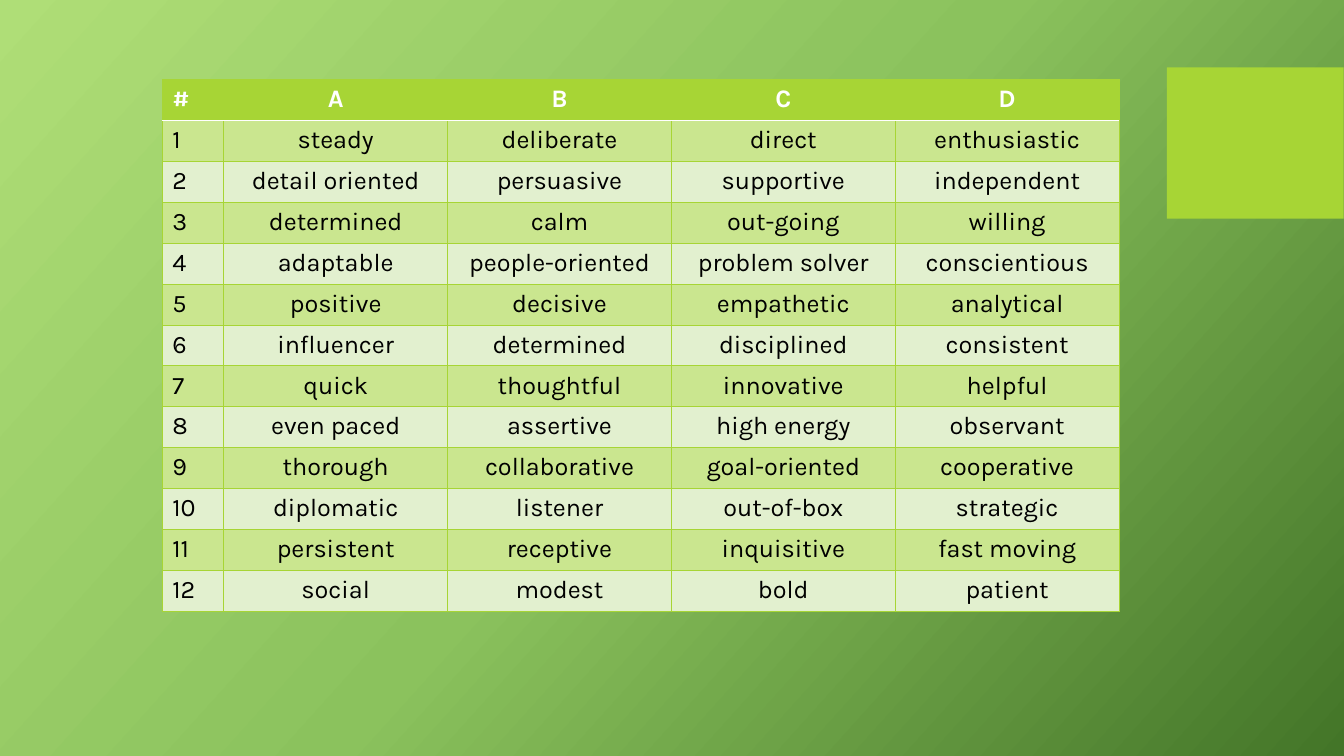
from lxml.etree import SubElement
from pptx import Presentation
from pptx.dml.color import RGBColor
from pptx.enum.shapes import MSO_SHAPE
from pptx.enum.text import PP_ALIGN
from pptx.oxml.ns import qn
from pptx.util import Cm, Pt

COLORS = {
    "lime": "A7D535",
    "band": "CAE68F",
    "pale": "E2F0CF",
    "white": "FFFFFF",
    "black": "000000",
}
BACKGROUND_STOPS = {0: "AFDE77", 50: "8BC25D", 100: "437528"}
PLAIN_TABLE_STYLE = "{2D5ABB26-0587-4C30-8999-92F81FD0307C}"
TABLE_TOP, TABLE_HEIGHT = 2.01, 13.39
NUMBER_LEFT, NUMBER_WIDTH = 4.09, 1.55
TRAIT_WIDTH = 5.64

TRAITS = [
    ("A", "B", "C", "D"),
    ("steady", "deliberate", "direct", "enthusiastic"),
    ("detail oriented", "persuasive", "supportive", "independent"),
    ("determined", "calm", "out-going", "willing"),
    ("adaptable", "people-oriented", "problem solver", "conscientious"),
    ("positive", "decisive", "empathetic", "analytical"),
    ("influencer", "determined", "disciplined", "consistent"),
    ("quick", "thoughtful", "innovative", "helpful"),
    ("even paced", "assertive", "high energy", "observant"),
    ("thorough", "collaborative", "goal-oriented", "cooperative"),
    ("diplomatic", "listener", "out-of-box", "strategic"),
    ("persistent", "receptive", "inquisitive", "fast moving"),
    ("social", "modest", "bold", "patient"),
]


def rgb(name):
    """Return the named palette colour."""
    return RGBColor.from_string(COLORS[name])


def set_background(slide):
    """Fill the slide with the diagonal green gradient."""
    fill = slide.background.fill
    fill.gradient()
    fill.gradient_angle = 360 - 42
    stop_list = slide.element.find(".//" + qn("a:gsLst"))
    for stop in list(stop_list):
        stop_list.remove(stop)
    for percent, color in BACKGROUND_STOPS.items():
        stop = SubElement(stop_list, qn("a:gs"), pos=str(percent * 1000))
        SubElement(stop, qn("a:srgbClr"), val=color)


def add_block(slide, left, top, width, height):
    """Add a plain lime rectangle."""
    shape = slide.shapes.add_shape(
        MSO_SHAPE.RECTANGLE, Cm(left), Cm(top), Cm(width), Cm(height))
    shape.shadow.inherit = False
    shape.fill.solid()
    shape.fill.fore_color.rgb = rgb("lime")
    shape.line.fill.background()


def add_border(cell, side, color, width):
    """Draw one border of a cell."""
    properties = cell._tc.get_or_add_tcPr()
    line = SubElement(properties, qn(f"a:ln{side}"), w=str(Pt(width)))
    fill = SubElement(line, qn("a:solidFill"))
    SubElement(fill, qn("a:srgbClr"), val=COLORS[color])


def format_cell(cell, text, row, alignment):
    """Write a cell and give it the look of its row."""
    white_edge = {0: "B", 1: "T"}.get(row)
    for side in "LRTB":
        if side == white_edge:
            add_border(cell, side, "white", 1)
        else:
            add_border(cell, side, "lime", 0.75)
    cell.fill.solid()
    banding = "band" if row % 2 else "pale"
    cell.fill.fore_color.rgb = rgb(banding if row else "lime")
    cell.text_frame.text = text
    paragraph = cell.text_frame.paragraphs[0]
    paragraph.alignment = alignment
    font = paragraph.runs[0].font
    font.name = "Karla"
    font.size = Pt(18)
    font.bold = row == 0
    font.color.rgb = rgb("black" if row else "white")


def add_banded_table(slide, rows, left, column_width, alignment):
    """Add a table of equal columns with a header and banded rows."""
    column_count = len(rows[0])
    table = slide.shapes.add_table(
        len(rows), column_count, Cm(left), Cm(TABLE_TOP),
        Cm(column_width * column_count), Cm(TABLE_HEIGHT)).table
    table._tbl.tblPr.find(qn("a:tableStyleId")).text = PLAIN_TABLE_STYLE
    for column in table.columns:
        column.width = Cm(column_width)
    for row, texts in enumerate(rows):
        table.rows[row].height = Cm(TABLE_HEIGHT / len(rows))
        for column, text in enumerate(texts):
            format_cell(table.cell(row, column), text, row, alignment)


def main():
    """Build and save the trait slide."""
    presentation = Presentation()
    presentation.slide_width = Cm(33.87)
    presentation.slide_height = Cm(19.05)
    slide = presentation.slides.add_slide(presentation.slide_layouts[6])
    set_background(slide)
    add_block(slide, 29.41, 1.7, 4.45, 3.81)
    add_banded_table(
        slide, TRAITS, NUMBER_LEFT + NUMBER_WIDTH, TRAIT_WIDTH, PP_ALIGN.CENTER)
    numbers = [("#",)] + [(str(number),) for number in range(1, len(TRAITS))]
    add_banded_table(slide, numbers, NUMBER_LEFT, NUMBER_WIDTH, PP_ALIGN.LEFT)
    presentation.save("out.pptx")


if __name__ == "__main__":
    main()
